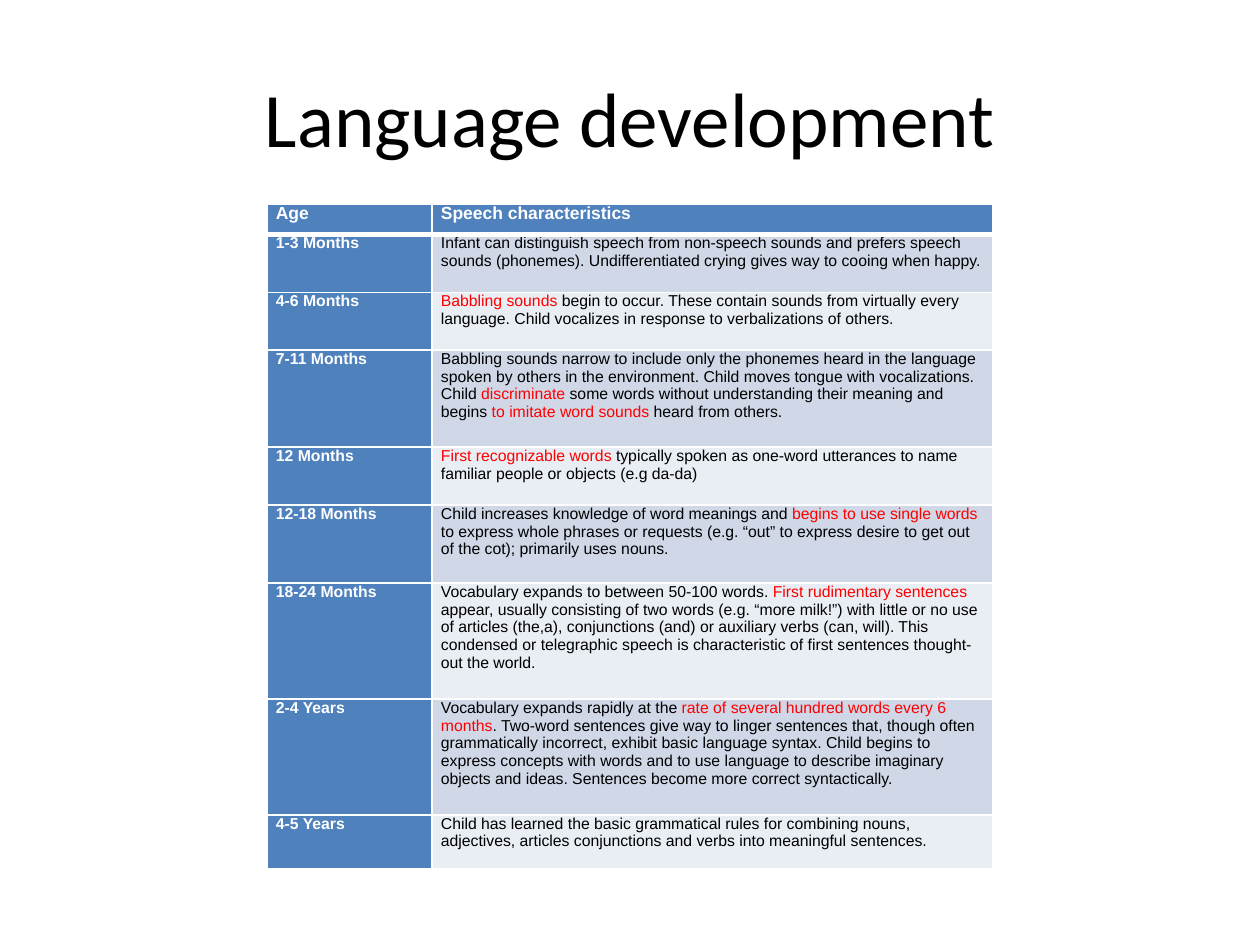
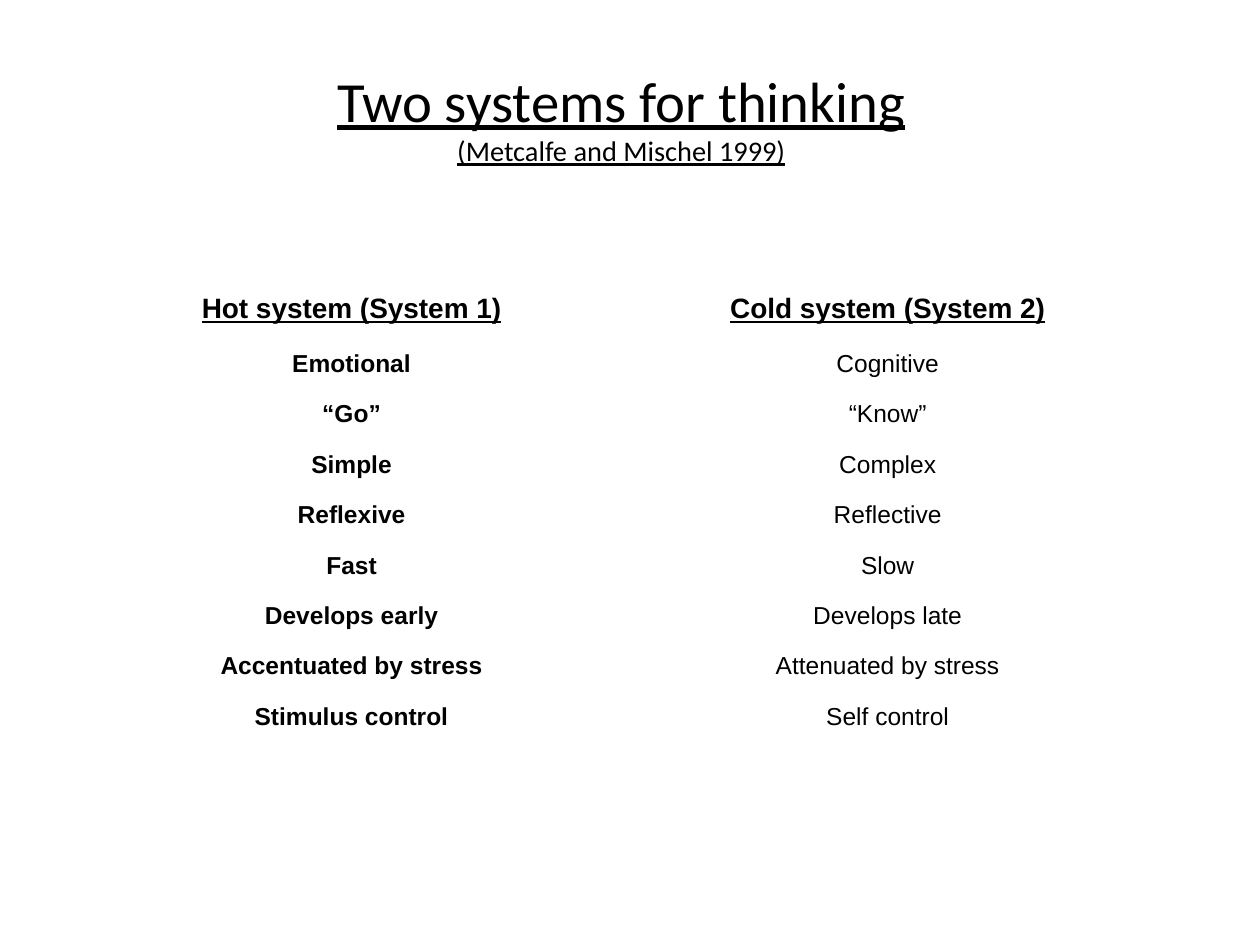
from dataclasses import dataclass

from lxml import etree
from pptx import Presentation
from pptx.dml.color import RGBColor
from pptx.enum.text import MSO_ANCHOR, PP_ALIGN
from pptx.oxml.ns import qn
from pptx.util import Inches, Pt

LEFT, CENTER = PP_ALIGN.LEFT, PP_ALIGN.CENTER
TOP, MIDDLE = MSO_ANCHOR.TOP, MSO_ANCHOR.MIDDLE

BLACK = RGBColor(0x00, 0x00, 0x00)
WHITE = RGBColor(0xFF, 0xFF, 0xFF)
RED = RGBColor(0xFF, 0x00, 0x00)
BLUE = RGBColor(0x4F, 0x81, 0xBD)
BAND_DARK = RGBColor(0xD0, 0xD8, 0xE8)
BAND_LIGHT = RGBColor(0xE9, 0xED, 0xF4)

TITLE_FONT, TABLE_FONT = "Calibri", "Arial"
HIGHLIGHT = "*"  # encloses words shown in red


@dataclass
class CellStyle:
    size: float
    color: RGBColor = BLACK
    fill: RGBColor = WHITE
    bold: bool = False
    underline: bool = False
    align: PP_ALIGN = LEFT


@dataclass
class TableSpec:
    left: float
    top: float
    col_widths: list[float]
    row_heights: list[float]
    rows: list[tuple[str, str]]
    header: CellStyle
    first_col: CellStyle
    bands: list[CellStyle]

    def style(self, row: int, col: int) -> CellStyle:
        if row == 0:
            return self.header
        if col == 0:
            return self.first_col
        return self.bands[(row - 1) % len(self.bands)]


@dataclass
class TitleSpec:
    left: float
    top: float
    lines: list[tuple[str, float]]
    anchor: MSO_ANCHOR = MIDDLE
    underline: bool = False


SPEECH_TITLE = TitleSpec(0.5, 0.3, [("Language development", 44)])
SPEECH_TABLE = TableSpec(
    left=2.12,
    top=1.62,
    col_widths=[1.31, 4.45],
    row_heights=[0.24, 0.46, 0.46, 0.77, 0.46, 0.62, 0.92, 0.92, 0.43],
    rows=[
        ("Age", "Speech characteristics"),
        ("1-3 Months",
         "Infant can distinguish speech from non-speech sounds and prefers speech "
         "sounds (phonemes). Undifferentiated crying gives way to cooing when happy."),
        ("4-6 Months",
         "*Babbling sounds *begin to occur. These contain sounds from virtually every "
         "language. Child vocalizes in response to verbalizations of others."),
        ("7-11 Months",
         "Babbling sounds narrow to include only the phonemes heard in the language "
         "spoken by others in the environment. Child moves tongue with vocalizations. "
         "Child *discriminate* some words without understanding their meaning and "
         "begins *to imitate word sounds *heard from others."),
        ("12 Months",
         "*First recognizable words *typically spoken as one-word utterances to name "
         "familiar people or objects (e.g da-da)"),
        ("12-18 Months",
         "Child increases knowledge of word meanings and *begins to use single words *"
         "to express whole phrases or requests (e.g. “out” to express desire to get "
         "out of the cot); primarily uses nouns."),
        ("18-24 Months",
         "Vocabulary expands to between 50-100 words. *First rudimentary sentences *"
         "appear, usually consisting of two words (e.g. “more milk!”) with little or "
         "no use of articles (the,a), conjunctions (and) or auxiliary verbs (can, "
         "will). This condensed or telegraphic speech is characteristic of first "
         "sentences thought-out the world."),
        ("2-4 Years",
         "Vocabulary expands rapidly at the *rate of several hundred words every 6 "
         "months*. Two-word sentences give way to linger sentences that, though often "
         "grammatically incorrect, exhibit basic language syntax. Child begins to "
         "express concepts with words and to use language to describe imaginary "
         "objects and ideas. Sentences become more correct syntactically."),
        ("4-5 Years",
         "Child has learned the basic grammatical rules for combining nouns, "
         "adjectives, articles conjunctions and verbs into meaningful sentences."),
    ],
    header=CellStyle(10, WHITE, BLUE, bold=True),
    first_col=CellStyle(9, WHITE, BLUE, bold=True),
    bands=[CellStyle(9, fill=BAND_DARK), CellStyle(9, fill=BAND_LIGHT)],
)

SYSTEMS_TITLE = TitleSpec(
    0.43, 0.47,
    [("Two systems for thinking", 32.4), ("(Metcalfe and Mischel 1999)", 16.2)],
    anchor=TOP, underline=True,
)
SYSTEMS_TABLE = TableSpec(
    left=0.59,
    top=2.33,
    col_widths=[4.4, 4.11],
    row_heights=[0.45] + [0.4] * 7 + [0.44],
    rows=[
        ("Hot system (System 1)", "Cold system (System 2)"),
        ("Emotional", "Cognitive"),
        ("“Go”", "“Know”"),
        ("Simple", "Complex"),
        ("Reflexive", "Reflective"),
        ("Fast", "Slow"),
        ("Develops early", "Develops late"),
        ("Accentuated by stress", "Attenuated by stress"),
        ("Stimulus control", "Self control"),
    ],
    header=CellStyle(16, bold=True, underline=True, align=CENTER),
    first_col=CellStyle(14, bold=True, align=CENTER),
    bands=[CellStyle(14, align=CENTER)],
)


def add_run(p, text: str, color: RGBColor, **font_values) -> None:
    r = p.add_run()
    r.text = text
    r.font.color.rgb = color
    for name, value in font_values.items():
        setattr(r.font, name, value)


def add_title(s, spec: TitleSpec) -> None:
    box = s.shapes.add_textbox(Inches(spec.left), Inches(spec.top), Inches(9), Inches(1.25))
    tf = box.text_frame
    tf.word_wrap = True
    tf.vertical_anchor = spec.anchor
    p = tf.paragraphs[0]
    p.alignment = CENTER
    for i, (text, size) in enumerate(spec.lines):
        if i:
            p.add_line_break()
        add_run(p, text, BLACK, name=TITLE_FONT, size=Pt(size), underline=spec.underline)


def add_borders(cell, widths: dict[str, float]) -> None:
    """Draw white cell edges; widths maps an edge tag to points."""
    tc_pr = cell._tc.get_or_add_tcPr()
    for tag, width in widths.items():
        ln = etree.SubElement(tc_pr, qn(f"a:{tag}"), w=str(Pt(width)))
        fill = etree.SubElement(ln, qn("a:solidFill"))
        etree.SubElement(fill, qn("a:srgbClr"), val=str(WHITE))


def fill_cell(cell, text: str, style: CellStyle) -> None:
    margins = {"margin_left": 0.07, "margin_right": 0.07, "margin_top": 0, "margin_bottom": 0}
    for name, value in margins.items():
        setattr(cell, name, Inches(value))
    cell.vertical_anchor = TOP
    cell.fill.solid()
    cell.fill.fore_color.rgb = style.fill
    p = cell.text_frame.paragraphs[0]
    p.alignment = style.align
    for i, part in enumerate(text.split(HIGHLIGHT)):
        if part:
            add_run(p, part, RED if i % 2 else style.color, name=TABLE_FONT,
                    size=Pt(style.size), bold=style.bold, underline=style.underline)


def add_table(s, spec: TableSpec) -> None:
    table = s.shapes.add_table(
        len(spec.rows), len(spec.col_widths), Inches(spec.left), Inches(spec.top),
        Inches(sum(spec.col_widths)), Inches(sum(spec.row_heights))).table
    table.first_row = table.horz_banding = False
    for column, width in zip(table.columns, spec.col_widths):
        column.width = Inches(width)
    for row, height in zip(table.rows, spec.row_heights):
        row.height = Inches(height)
    for i, texts in enumerate(spec.rows):
        for j, text in enumerate(texts):
            cell = table.cell(i, j)
            add_borders(cell, {"lnL": 1, "lnR": 1, "lnT": 3 if i == 1 else 1,
                               "lnB": 3 if i == 0 else 1})
            fill_cell(cell, text, spec.style(i, j))


def main() -> None:
    prs = Presentation()
    prs.slide_width, prs.slide_height = Inches(10), Inches(7.5)
    for title, table in [(SPEECH_TITLE, SPEECH_TABLE), (SYSTEMS_TITLE, SYSTEMS_TABLE)]:
        s = prs.slides.add_slide(prs.slide_layouts[6])
        add_title(s, title)
        add_table(s, table)
    prs.save("out.pptx")


if __name__ == "__main__":
    main()
